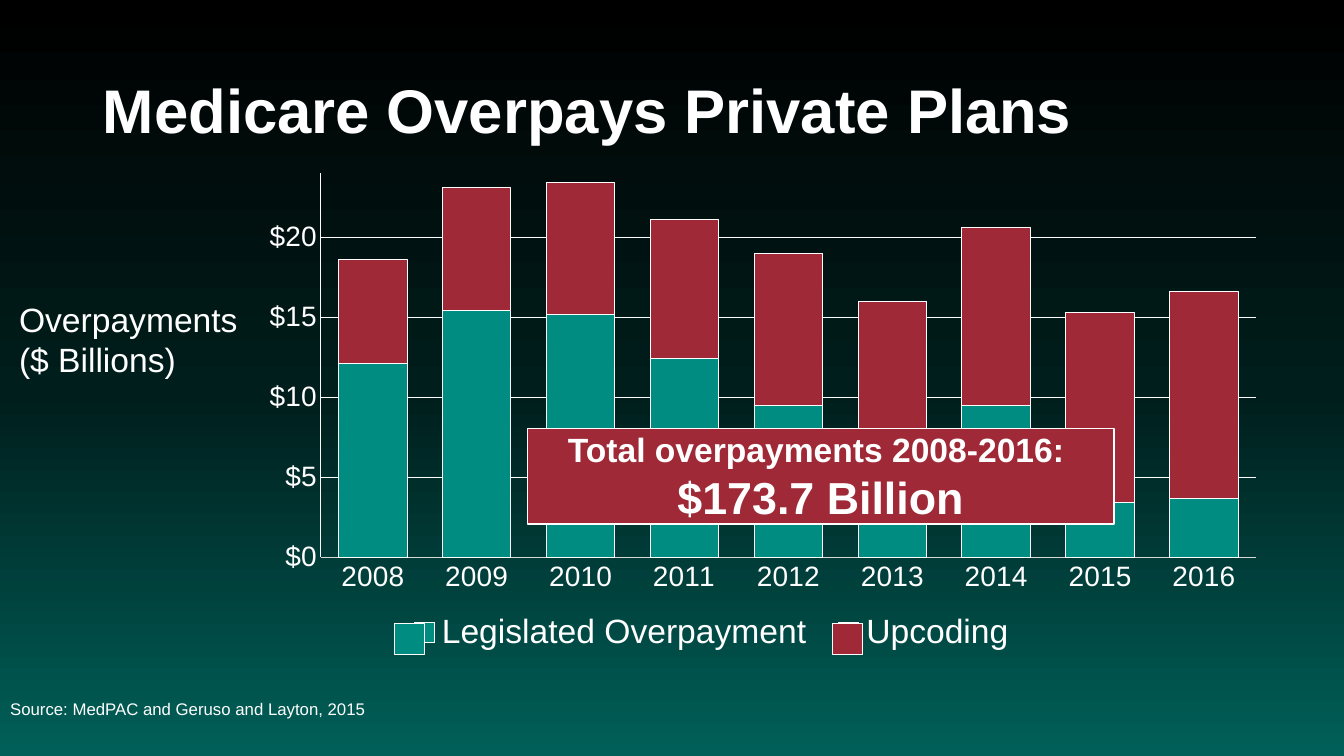
from dataclasses import dataclass

from lxml.etree import SubElement
from pptx import Presentation
from pptx.chart.data import CategoryChartData
from pptx.dml.color import RGBColor
from pptx.enum.chart import XL_CHART_TYPE as ChartType
from pptx.enum.chart import XL_LEGEND_POSITION as LegendPosition
from pptx.enum.chart import XL_TICK_MARK as TickMark
from pptx.enum.shapes import MSO_SHAPE as Preset
from pptx.enum.text import MSO_ANCHOR as Anchor
from pptx.enum.text import PP_ALIGN as Align
from pptx.oxml.ns import qn
from pptx.util import Inches, Pt


@dataclass(frozen=True)
class Theme:
    font: str = "Arial"
    white: str = "FFFFFF"
    teal: str = "008C81"
    red: str = "9F2936"
    axis_grey: str = "D9D9D9"
    backdrop: tuple = ((0, "000000"), (52, "001E1C"), (100, "006059"))
    title: int = 44
    total: int = 32
    label: int = 24
    axis: int = 20
    source: int = 12
    outline: float = 0.75


THEME = Theme()

YEARS = [str(year) for year in range(2008, 2017)]
OVERPAYMENTS = (
    ("Legislated Overpayment", THEME.teal, (12.1, 15.4, 15.2, 12.4, 9.5, 5.8, 9.5, 3.4, 3.7)),
    ("Upcoding", THEME.red, (6.5, 7.7, 8.2, 8.7, 9.5, 10.2, 11.1, 11.9, 12.9)),
)


def rgb(code):
    return RGBColor.from_string(code)


def style_font(font, size, bold=False):
    font.name = THEME.font
    font.size = Pt(size)
    font.bold = bold
    font.color.rgb = rgb(THEME.white)


def style_line(line, color=THEME.white, width=THEME.outline):
    line.color.rgb = rgb(color)
    line.width = Pt(width)


def place(shape, left, top, width, height):
    shape.left, shape.top = Inches(left), Inches(top)
    shape.width, shape.height = Inches(width), Inches(height)


def write(shape, lines, align=Align.LEFT, bold=False, spacing=None):
    """Fill a shape with one paragraph per (text, size) pair."""
    frame = shape.text_frame
    frame.word_wrap = True
    frame.vertical_anchor = Anchor.MIDDLE
    for index, (text, size) in enumerate(lines):
        paragraph = frame.add_paragraph() if index else frame.paragraphs[0]
        paragraph.alignment = align
        paragraph.line_spacing = spacing
        run = paragraph.add_run()
        run.text = text
        style_font(run.font, size, bold)


def paint_background(slide):
    fill = slide.background.fill
    fill.gradient()
    fill.gradient_angle = 270
    stops = next(slide.element.iter(qn("a:gsLst")))
    for stop in list(stops):
        stops.remove(stop)
    for percent, color in THEME.backdrop:
        stop = SubElement(stops, qn("a:gs"), pos=str(percent * 1000))
        SubElement(stop, qn("a:srgbClr"), val=color)


def add_source(slide, text):
    source = slide.placeholders[1]
    place(source, 0, 6.58, 9, 0.92)
    write(source, [(text, THEME.source)], spacing=0.9)
    paragraph = source.text_frame.paragraphs[0]
    paragraph.space_before = Pt(0)
    properties = paragraph._p.get_or_add_pPr()
    properties.set("marL", "0")
    properties.set("indent", "0")
    SubElement(properties, qn("a:buNone"))


def add_box(slide, bounds, color, width=THEME.outline):
    box = slide.shapes.add_shape(Preset.RECTANGLE, *map(Inches, bounds))
    box.shadow.inherit = False
    box.fill.solid()
    box.fill.fore_color.rgb = rgb(color)
    style_line(box.line, width=width)
    return box


def set_layout(part, x, y, w, h, inner=False):
    """Fix a chart part's place as fractions of the chart area."""
    layout = part.find(qn("c:layout"))
    if layout is None:
        layout = part.makeelement(qn("c:layout"))
        anchor = part.find(qn("c:legendPos"))
        if anchor is None:
            part.insert(0, layout)
        else:
            anchor.addnext(layout)
    manual = SubElement(layout, qn("c:manualLayout"))
    if inner:
        SubElement(manual, qn("c:layoutTarget"), val="inner")
    for mode in ("xMode", "yMode"):
        SubElement(manual, qn(f"c:{mode}"), val="edge")
    for name, value in zip("xywh", (x, y, w, h)):
        SubElement(manual, qn(f"c:{name}"), val=str(value))


def style_axis(axis, color):
    axis.major_tick_mark = axis.minor_tick_mark = TickMark.NONE
    style_font(axis.tick_labels.font, THEME.axis)
    style_line(axis.format.line, color)


def add_overpayment_chart(slide):
    data = CategoryChartData()
    data.categories = YEARS
    for name, _, values in OVERPAYMENTS:
        data.add_series(name, values)
    bounds = map(Inches, (2.47, 1.62, 10.19, 4.95))
    chart = slide.shapes.add_chart(ChartType.COLUMN_STACKED, *bounds, data).chart
    style_font(chart.font, THEME.axis)
    chart.has_title = False

    style_axis(chart.category_axis, THEME.axis_grey)
    dollars = chart.value_axis
    style_axis(dollars, THEME.white)
    dollars.minimum_scale, dollars.maximum_scale, dollars.major_unit = 0, 24, 5
    dollars.tick_labels.number_format = '"$"#,##0'
    dollars.tick_labels.number_format_is_linked = False
    style_line(dollars.major_gridlines.format.line, width=0.5)

    plot = chart.plots[0]
    plot.gap_width, plot.overlap = 52, 100
    plot.vary_by_categories = False
    for series, (_, color, _) in zip(plot.series, OVERPAYMENTS):
        series.format.fill.solid()
        series.format.fill.fore_color.rgb = rgb(color)
        style_line(series.format.line)

    chart.has_legend = True
    legend = chart.legend
    legend.position = LegendPosition.BOTTOM
    legend.include_in_layout = False
    style_font(legend.font, THEME.label)
    plot_area = next(chart.element.iter(qn("c:plotArea")))
    set_layout(plot_area, 0.07, 0.02, 0.91, 0.77, inner=True)
    set_layout(next(chart.element.iter(qn("c:legend"))), 0.14, 0.89, 0.62, 0.1)


def main():
    deck = Presentation()
    deck.slide_width, deck.slide_height = Inches(13.33), Inches(7.5)
    slide = deck.slides.add_slide(deck.slide_layouts[1])
    paint_background(slide)

    title = slide.shapes.title
    place(title, 0.92, 0.4, 11.5, 1.45)
    write(title, [("Medicare Overpays Private Plans", THEME.title)], bold=True, spacing=0.9)
    add_source(slide, "Source: MedPAC and Geruso and Layton, 2015")
    add_overpayment_chart(slide)

    axis_label = slide.shapes.add_textbox(*map(Inches, (0.09, 2.91, 2.38, 0.91)))
    write(axis_label, [("Overpayments ($ Billions)", THEME.label)])

    callout = add_box(slide, (5.23, 4.25, 5.82, 0.95), THEME.red, width=1)
    total = [("Total overpayments 2008-2016: ", THEME.label), ("$173.7 Billion", THEME.total)]
    write(callout, total, align=Align.CENTER, bold=True)

    for left, (_, color, _) in zip((3.91, 8.26), OVERPAYMENTS):
        add_box(slide, (left, 6.19, 0.3, 0.3), color)

    deck.save("out.pptx")


if __name__ == "__main__":
    main()
